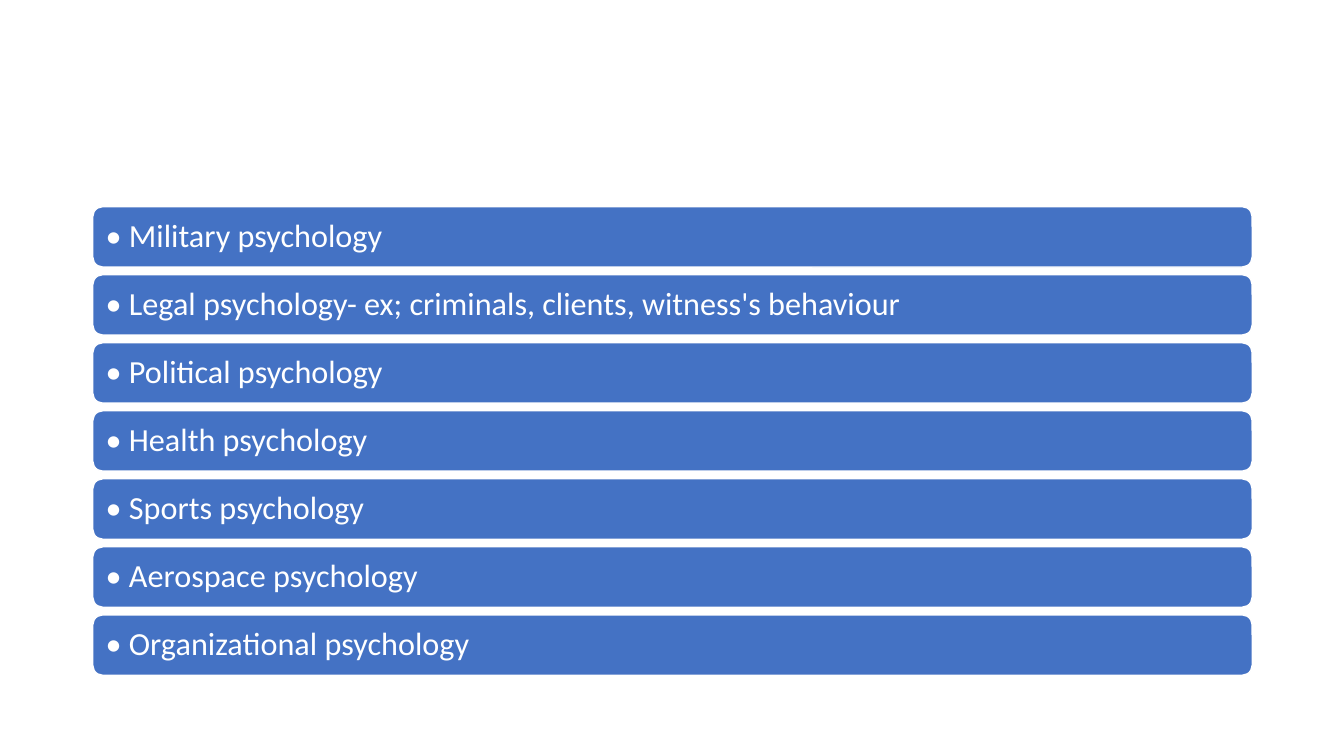
import pptx
import pptx.dml.color
import pptx.enum.shapes
import pptx.enum.text
import pptx.util

WIDTH, HEIGHT = 13.33, 7.5
LEFT, BAR_WIDTH, BAR_HEIGHT = 0.92, 11.5, 0.6
FIRST_TOP, LAST_TOP = 2.05, 6.1
BRANCHES = [
    "Military psychology",
    "Legal psychology- ex; criminals, clients, witness's behaviour",
    "Political psychology",
    "Health psychology",
    "Sports psychology",
    "Aerospace psychology",
    "Organizational psychology",
]


def paint(color_format, value):
    color_format.rgb = pptx.dml.color.RGBColor.from_string(value)


def add_bar(shapes, top, text):
    inches = pptx.util.Inches
    sp = shapes.add_shape(
        pptx.enum.shapes.MSO_SHAPE.ROUNDED_RECTANGLE,
        inches(LEFT), inches(top), inches(BAR_WIDTH), inches(BAR_HEIGHT))
    sp.shadow.inherit = False
    sp.fill.solid()
    paint(sp.fill.fore_color, "4472C4")
    paint(sp.line.color, "FFFFFF")
    sp.line.width = pptx.util.Pt(1)

    tf = sp.text_frame
    tf.word_wrap = True
    tf.vertical_anchor = pptx.enum.text.MSO_ANCHOR.MIDDLE
    tf.margin_left = tf.margin_right = inches(0.1)
    tf.margin_top = tf.margin_bottom = inches(0.1)
    p = tf.paragraphs[0]
    p.alignment = pptx.enum.text.PP_ALIGN.LEFT
    p.line_spacing = 0.9
    r = p.add_run()
    r.text = f"• {text}"
    r.font.name = "Calibri"
    r.font.size = pptx.util.Pt(23)
    paint(r.font.color, "FFFFFF")


def main():
    prs = pptx.Presentation()
    prs.slide_width = pptx.util.Inches(WIDTH)
    prs.slide_height = pptx.util.Inches(HEIGHT)
    slide = prs.slides.add_slide(prs.slide_layouts[6])
    group = slide.shapes.add_group_shape()
    pitch = (LAST_TOP - FIRST_TOP) / (len(BRANCHES) - 1)
    for row, branch in enumerate(BRANCHES):
        add_bar(group.shapes, FIRST_TOP + row * pitch, branch)
    prs.save("out.pptx")


if __name__ == "__main__":
    main()
